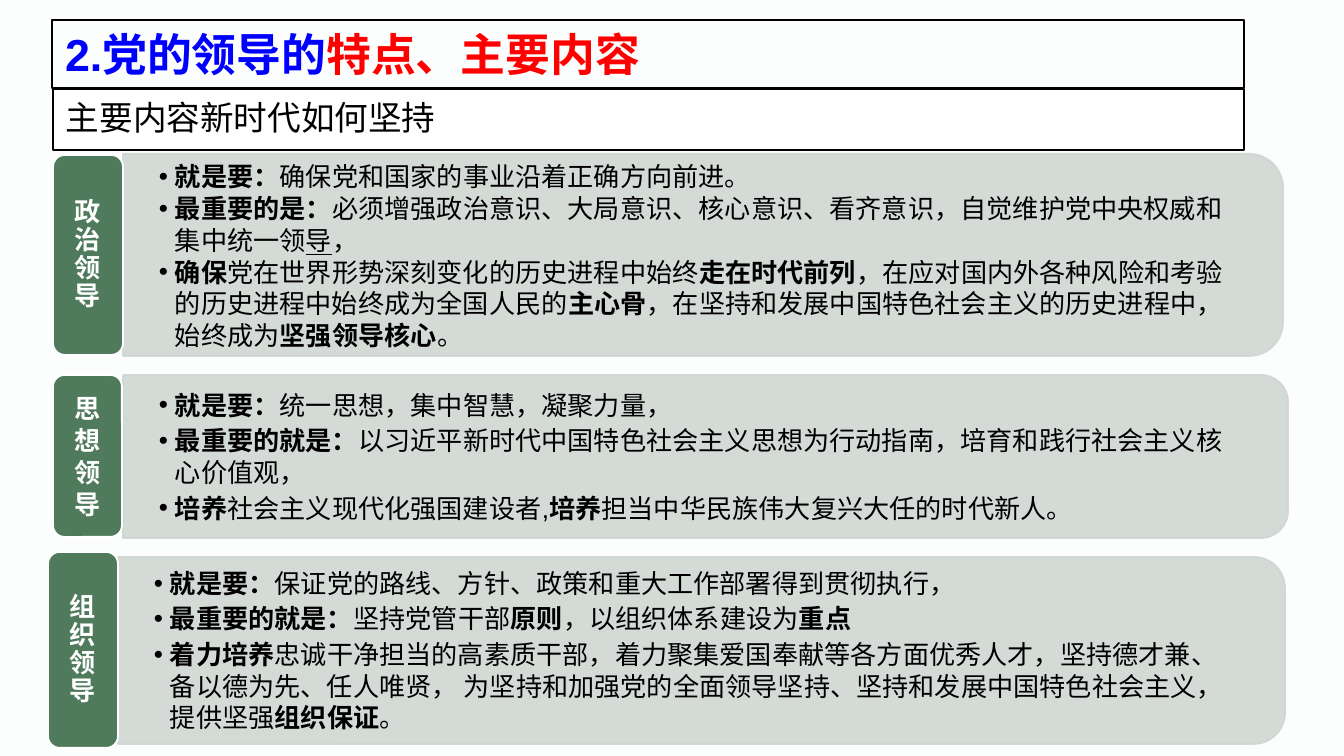
from dataclasses import dataclass

from lxml.etree import SubElement
from pptx import Presentation
from pptx.dml.color import RGBColor
from pptx.enum.shapes import MSO_SHAPE as Preset
from pptx.enum.text import MSO_ANCHOR as Anchor, PP_ALIGN as Align
from pptx.oxml.ns import qn
from pptx.util import Emu, Pt


@dataclass(frozen=True)
class Theme:
    background: str = "FCFDFD"
    panel: str = "D0D7D2"
    green: str = "4F7A5C"
    white: str = "FFFFFF"
    black: str = "000000"
    blue: str = "0000FF"
    red: str = "FF0000"
    latin: str = "Arial"
    chinese: str = "Noto Sans CJK SC"
    title: int = 24
    subtitle: int = 18
    body: int = 14
    leading: int = 17
    opacity: int = 90


THEME = Theme()
SLIDE = (1344, 756)
BULLET_INDENT = 16
PANEL_INSETS = (36, 19, 36, 19)
TAG_INSETS = (8, 4, 8, 4)
BOX_INSETS = (13, 7, 13, 7)

TITLE_BOX = (52, 20, 1192, 68)
SUBTITLE_BOX = (53, 89, 1191, 61)
TITLE = [
    ("2.", THEME.blue, THEME.latin),
    ("党的领导的", THEME.blue, THEME.chinese),
    ("特点、主要内容", THEME.red, THEME.chinese),
]
SUBTITLE = "主要内容新时代如何坚持"

# Run styles: "b" bold, "u" underlined, "" plain
SECTIONS = [
    {
        "tag": "政治领导", "tag_box": (53, 155, 70, 200), "tag_leading": 0.9,
        "panel_box": (123, 154, 1160, 202), "text_box": (123, 165, 1150, 181), "gap": 0,
        "points": [
            [("就是要：", "b"), ("确保党和国家的事业沿着正确方向前进。", "")],
            [("最重要的是：", "b"),
             ("必须增强政治意识、大局意识、核心意识、看齐意识，自觉维护党中央权威和集中统一领", ""),
             ("导", "u"), ("，", "")],
            [("确保", "b"), ("党在世界形势深刻变化的历史进程中始终", ""), ("走在时代前列", "b"),
             ("，在应对国内外各种风险和考验的历史进程中始终成为全国人民的", ""), ("主心骨", "b"),
             ("，在坚持和发展中国特色社会主义的历史进程中，始终成为", ""),
             ("坚强领导核心", "b"), ("。", "")],
        ],
    },
    {
        "tag": "思想领导", "tag_box": (53, 375, 69, 162), "tag_leading": Pt(THEME.leading),
        "panel_box": (123, 375, 1165, 163), "text_box": (123, 382, 1157, 148), "gap": 2,
        "points": [
            [("就是要：", "b"), ("统一思想，集中智慧，凝聚力量，", "")],
            [("最重要的就是：", "b"),
             ("以习近平新时代中国特色社会主义思想为行动指南，培育和践行社会主义核心价值观，", "")],
            [("培养", "b"), ("社会主义现代化强国建设者,", ""), ("培养", "b"),
             ("担当中华民族伟大复兴大任的时代新人。", "")],
        ],
    },
    {
        "tag": "组织领导", "tag_box": (48, 552, 70, 196), "tag_leading": 0.9,
        "panel_box": (118, 557, 1167, 187), "text_box": (118, 566, 1157, 168), "gap": 2,
        "points": [
            [("就是要：", "b"), ("保证党的路线、方针、政策和重大工作部署得到贯彻执行，", "")],
            [("最重要的就是：", "b"), ("坚持党管干部", ""), ("原则", "b"),
             ("，以组织体系建设为", ""), ("重点", "b")],
            [("着力培养", "b"),
             ("忠诚干净担当的高素质干部，着力聚集爱国奉献等各方面优秀人才，坚持德才兼、"
              "备以德为先、任人唯贤， 为坚持和加强党的全面领导坚持、坚持和发展中国特色社会主义，提供坚强", ""),
             ("组织保证", "b"), ("。", "")],
        ],
    },
]


def px(length):
    return Emu(round(length * 914400 / 134.4))


def rgb(color):
    return RGBColor.from_string(color)


def add_box(slide, preset, box, fill=None, line=None, width=1):
    shape = slide.shapes.add_shape(preset, *map(px, box))
    shape.shadow.inherit = False
    if fill:
        shape.fill.solid()
        shape.fill.fore_color.rgb = rgb(fill)
    else:
        shape.fill.background()
    shape.line.color.rgb = rgb(line)
    shape.line.width = Pt(width)
    return shape


def prepare_frame(shape, insets, anchor):
    frame = shape.text_frame
    frame.word_wrap = True
    frame.vertical_anchor = anchor
    frame.margin_left, frame.margin_top, frame.margin_right, frame.margin_bottom = map(px, insets)
    return frame


def add_run(paragraph, text, size, color, bold=False, underline=False, latin=THEME.latin):
    run = paragraph.add_run()
    run.text = text
    font = run.font
    font.size, font.bold, font.name = Pt(size), bold, latin
    font.color.rgb = rgb(color)
    if underline:
        font.underline = True
    latin_tag = run._r.rPr.find(qn("a:latin"))
    east_asian = SubElement(run._r.rPr, qn("a:ea"), typeface=THEME.chinese)
    latin_tag.addnext(east_asian)


def add_panel(slide, box):
    """Panel rounded on its right side: a top-rounded shape turned a quarter."""
    left, top, width, height = box
    turn = (width - height) / 2
    panel = add_box(slide, Preset.ROUND_2_SAME_RECTANGLE,
                    (left + turn, top - turn, height, width), THEME.panel, THEME.panel)
    panel.rotation = 90
    for color in panel._element.spPr.iter(qn("a:srgbClr")):
        SubElement(color, qn("a:alpha"), val=str(THEME.opacity * 1000))


def add_points(slide, section):
    text_box = slide.shapes.add_textbox(*map(px, section["text_box"]))
    frame = prepare_frame(text_box, PANEL_INSETS, Anchor.MIDDLE)
    for index, point in enumerate(section["points"]):
        paragraph = frame.add_paragraph() if index else frame.paragraphs[0]
        paragraph.level = 1
        paragraph.line_spacing = Pt(THEME.leading)
        paragraph.space_after = Pt(section["gap"])
        properties = paragraph._p.get_or_add_pPr()
        properties.set("marL", str(px(BULLET_INDENT)))
        properties.set("indent", str(-px(BULLET_INDENT)))
        SubElement(properties, qn("a:buFont"), typeface=THEME.latin)
        SubElement(properties, qn("a:buChar"), char="•")
        for text, style in point:
            add_run(paragraph, text, THEME.body, THEME.black, style == "b", style == "u")


def add_tag(slide, section):
    left, top, width, height = section["tag_box"]
    add_box(slide, Preset.ROUNDED_RECTANGLE, section["tag_box"], THEME.green, THEME.white)
    label = slide.shapes.add_textbox(*map(px, (left + 3, top + 3, width - 6, height - 6)))
    paragraph = prepare_frame(label, TAG_INSETS, Anchor.MIDDLE).paragraphs[0]
    paragraph.alignment = Align.CENTER
    paragraph.line_spacing = section["tag_leading"]
    add_run(paragraph, section["tag"], THEME.body, THEME.white, bold=True)


def add_headings(slide):
    title = add_box(slide, Preset.RECTANGLE, TITLE_BOX, line=THEME.black, width=0.75)
    paragraph = prepare_frame(title, BOX_INSETS, Anchor.TOP).paragraphs[0]
    paragraph.alignment = Align.LEFT
    for text, color, latin in TITLE:
        add_run(paragraph, text, THEME.title, color, bold=True, latin=latin)

    subtitle = add_box(slide, Preset.RECTANGLE, SUBTITLE_BOX, THEME.white, THEME.black)
    paragraph = prepare_frame(subtitle, BOX_INSETS, Anchor.MIDDLE).paragraphs[0]
    paragraph.alignment = Align.LEFT
    paragraph.line_spacing = 0.9
    add_run(paragraph, SUBTITLE, THEME.subtitle, THEME.black)


def main():
    deck = Presentation()
    deck.slide_width, deck.slide_height = map(px, SLIDE)
    slide = deck.slides.add_slide(deck.slide_layouts[6])
    slide.background.fill.solid()
    slide.background.fill.fore_color.rgb = rgb(THEME.background)
    for section in SECTIONS:
        add_panel(slide, section["panel_box"])
        add_points(slide, section)
        add_tag(slide, section)
    add_headings(slide)
    deck.save("out.pptx")


if __name__ == "__main__":
    main()
